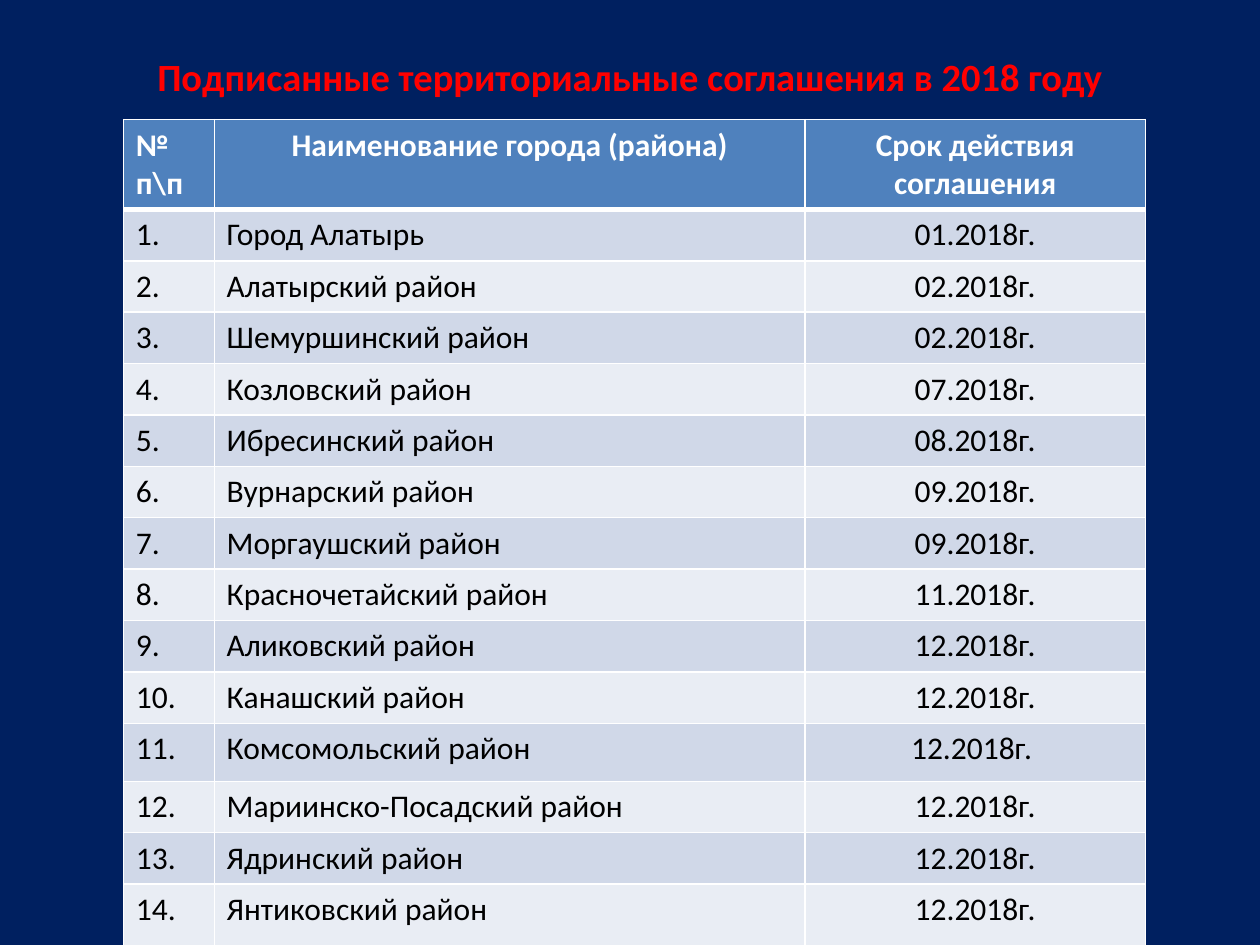
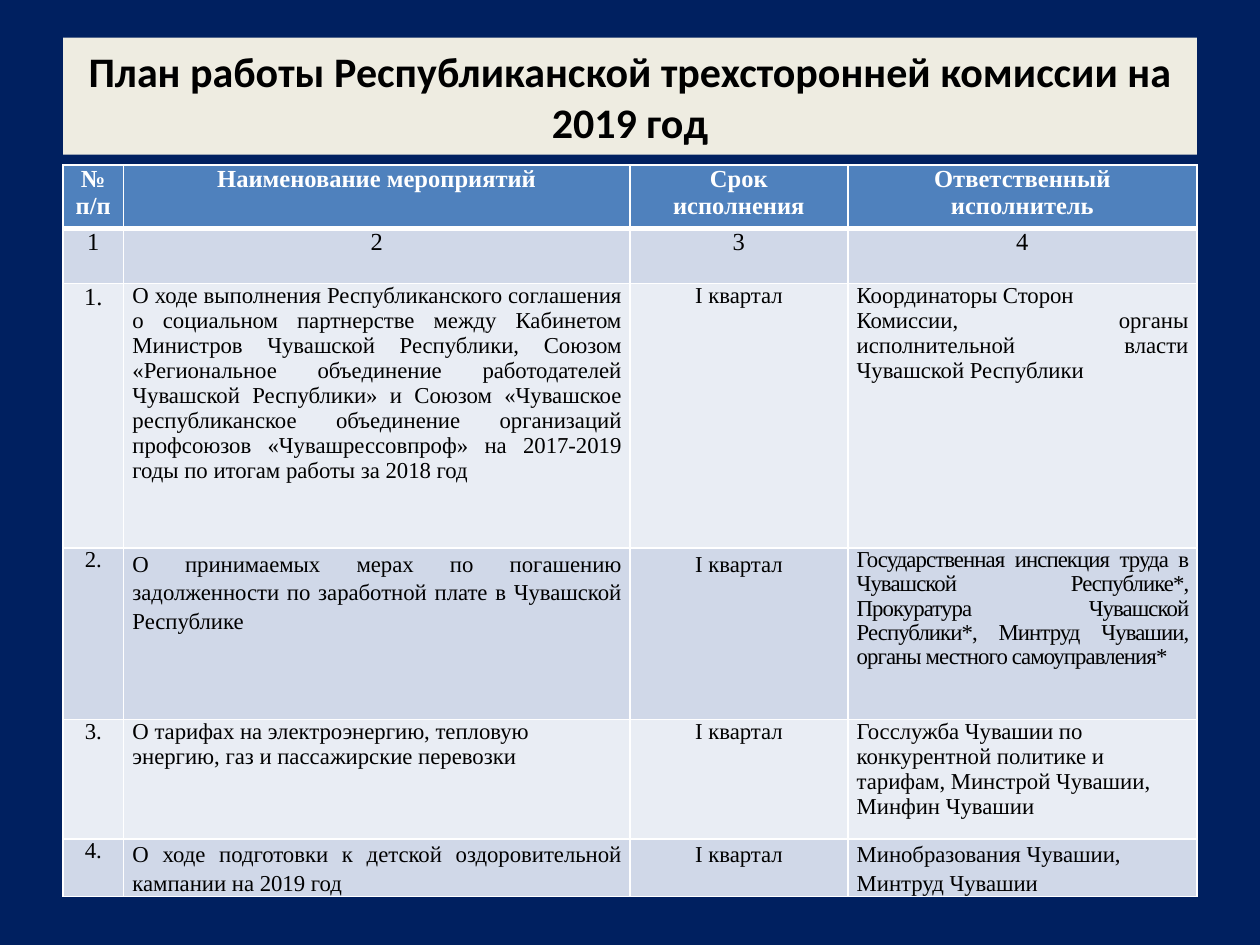
from dataclasses import dataclass, replace

import lxml.etree
import pptx
import pptx.dml.color
import pptx.dml.fill
import pptx.enum.text
import pptx.oxml.ns
import pptx.presentation
import pptx.slide
import pptx.table
import pptx.text.text
import pptx.util

Cm = pptx.util.Cm
LEFT = pptx.enum.text.PP_ALIGN.LEFT
CENTER = pptx.enum.text.PP_ALIGN.CENTER
JUSTIFY = pptx.enum.text.PP_ALIGN.JUSTIFY
MIDDLE = pptx.enum.text.MSO_ANCHOR.MIDDLE

NAVY, RED, CREAM = "002060", "FF0000", "EEECE1"
WHITE, BLACK = "FFFFFF", "000000"
HEADER_BLUE = "4F81BD"
BANDS = ("D0D8E8", "E9EDF4")
SANS, SERIF = "Calibri", "Times New Roman"
TITLE_ONLY_LAYOUT = 5


@dataclass(frozen=True)
class Entry:
    """One table cell; a line break in the text starts a new paragraph."""
    text: str
    align: int = CENTER
    size: float = 13
    line_spacing: float = 1.0
    tracking: float = 0


@dataclass(frozen=True)
class Heading:
    text: str
    height: float
    size: float
    color: str
    fill: str | None = None


@dataclass(frozen=True)
class Grid:
    """Table geometry in centimetres and its rows, header first."""
    left: float
    top: float
    columns: list[float]
    heights: list[float]
    rows: list[list[Entry]]
    font: str
    side_margin: float
    edge_margin: float


def paint(fill: pptx.dml.fill.FillFormat, color: str) -> None:
    fill.solid()
    fill.fore_color.rgb = pptx.dml.color.RGBColor.from_string(color)


def write(frame: pptx.text.text.TextFrame, text: str, *, font: str, size: float,
          color: str, bold: bool = False, align: int = CENTER,
          line_spacing: float = 1.0, tracking: float = 0) -> None:
    for index, line in enumerate(text.split("\n")):
        paragraph = frame.add_paragraph() if index else frame.paragraphs[0]
        paragraph.alignment = align
        paragraph.line_spacing = line_spacing
        run = paragraph.add_run()
        run.text = line
        run.font.name = font
        run.font.size = pptx.util.Pt(size)
        run.font.bold = bold
        paint(run.font.fill, color)
        if tracking:
            run._r.get_or_add_rPr().set("spc", str(round(tracking * 100)))


def draw_borders(cell: pptx.table._Cell, row: int) -> None:
    """White borders, thicker on the line under the header."""
    qn = pptx.oxml.ns.qn
    properties = cell._tc.get_or_add_tcPr()
    widths = {"L": 1, "R": 1, "T": 3 if row == 1 else 1, "B": 3 if row == 0 else 1}
    for side, width in widths.items():
        line = lxml.etree.SubElement(properties, qn(f"a:ln{side}"),
                                     w=str(pptx.util.Pt(width)))
        fill = lxml.etree.SubElement(line, qn("a:solidFill"))
        lxml.etree.SubElement(fill, qn("a:srgbClr"), val=WHITE)


def fill_cell(cell: pptx.table._Cell, entry: Entry, row: int, grid: Grid) -> None:
    is_header = row == 0
    draw_borders(cell, row)
    paint(cell.fill, HEADER_BLUE if is_header else BANDS[(row - 1) % 2])
    cell.margin_left = cell.margin_right = Cm(grid.side_margin)
    cell.margin_top = cell.margin_bottom = Cm(grid.edge_margin)
    write(cell.text_frame, entry.text, font=grid.font, size=entry.size,
          color=WHITE if is_header else BLACK, bold=is_header, align=entry.align,
          line_spacing=entry.line_spacing, tracking=entry.tracking)


def add_grid(slide: pptx.slide.Slide, grid: Grid) -> None:
    table = slide.shapes.add_table(
        len(grid.rows), len(grid.columns), Cm(grid.left), Cm(grid.top),
        Cm(sum(grid.columns)), Cm(sum(grid.heights))).table
    for column, width in zip(table.columns, grid.columns):
        column.width = Cm(width)
    for row, (height, entries) in enumerate(zip(grid.heights, grid.rows)):
        table.rows[row].height = Cm(height)
        for column, entry in enumerate(entries):
            fill_cell(table.cell(row, column), entry, row, grid)


def add_slide(deck: pptx.presentation.Presentation, heading: Heading, grid: Grid) -> None:
    slide = deck.slides.add_slide(deck.slide_layouts[TITLE_ONLY_LAYOUT])
    title = slide.shapes.title
    title.left, title.top = Cm(1.27), Cm(0.76)
    title.width, title.height = Cm(22.86), Cm(heading.height)
    if heading.fill:
        paint(title.fill, heading.fill)
    frame = title.text_frame
    frame.word_wrap = True
    frame.auto_size = pptx.enum.text.MSO_AUTO_SIZE.NONE
    frame.vertical_anchor = MIDDLE
    write(frame, heading.text, font=SANS, size=heading.size,
          color=heading.color, bold=True)
    add_grid(slide, grid)


AGREEMENTS = [
    ("Город Алатырь", "01.2018г."),
    ("Алатырский район", "02.2018г."),
    ("Шемуршинский район", "02.2018г."),
    ("Козловский район", "07.2018г."),
    ("Ибресинский район", "08.2018г."),
    ("Вурнарский район", "09.2018г."),
    ("Моргаушский район", "09.2018г."),
    ("Красночетайский район", "11.2018г."),
    ("Аликовский район", "12.2018г."),
    ("Канашский район", "12.2018г."),
    ("Комсомольский район", "12.2018г. "),
    ("Мариинско-Посадский район", "12.2018г."),
    ("Ядринский район", "12.2018г."),
    ("Янтиковский район", "12.2018г."),
]


def agreement_row(number: str, district: str, term: str,
                  district_align: int = LEFT) -> list[Entry]:
    return [Entry(number, LEFT, 18), Entry(district, district_align, 18),
            Entry(term, CENTER, 18)]


def agreements_grid() -> Grid:
    rows = [agreement_row("№\nп\\п", "Наименование города (района)",
                          "Срок действия соглашения", CENTER)]
    rows += [agreement_row(f"{number}.", district, term)
             for number, (district, term) in enumerate(AGREEMENTS, 1)]
    heights = [1.73] + [0.99] * 10 + [1.17, 0.99, 0.99, 1.24]
    return Grid(2.49, 2.41, [1.83, 11.91, 6.86], heights, rows, SANS, 0.25, 0.13)


def plan_row(number: Entry, activity: Entry, executor: Entry) -> list[Entry]:
    """A row due in the first quarter, spaced like its activity."""
    term = Entry("I квартал", line_spacing=activity.line_spacing)
    return [number, activity, term, executor]


def plan_grid() -> Grid:
    header = ["№\nп/п", "Наименование мероприятий", "Срок\nисполнения",
              "Ответственный\nисполнитель"]
    justified = Entry("", JUSTIFY)
    loose = replace(justified, line_spacing=1.15)
    rows = [
        [Entry(text, size=14) for text in header],
        [Entry(str(number), size=14) for number in range(1, 5)],
        plan_row(
            Entry("1.", size=14),
            replace(justified, text=(
                "О ходе выполнения Республиканского соглашения о социальном "
                "партнерстве между Кабинетом Министров Чувашской Республики, "
                "Союзом «Региональное объединение работодателей Чувашской "
                "Республики» и Союзом «Чувашское республиканское объединение "
                "организаций профсоюзов «Чувашрессовпроф» на 2017-2019 годы "
                "по итогам работы за 2018 год")),
            replace(justified, text=(
                "Координаторы Сторон \nКомиссии, органы исполнительной власти "
                "Чувашской Республики"))),
        plan_row(
            Entry("2.", line_spacing=0.97),
            replace(loose, text=(
                "О принимаемых мерах по погашению задолженности по заработной "
                "плате в Чувашской Республике")),
            Entry("Государственная инспекция труда в Чувашской Республике*, "
                  "Прокуратура Чувашской Республики*, Минтруд Чувашии, "
                  "органы местного самоуправления* ",
                  JUSTIFY, line_spacing=0.97, tracking=-0.5)),
        plan_row(
            Entry("3."),
            Entry("О тарифах на электроэнергию, тепловую энергию, газ и "
                  "пассажирские перевозки", LEFT),
            Entry("Госслужба Чувашии по конкурентной политике и тарифам, "
                  "Минстрой Чувашии, Минфин Чувашии", LEFT)),
        plan_row(
            Entry("4.", line_spacing=0.97),
            replace(loose, text=(
                "О ходе подготовки к детской оздоровительной кампании на 2019 год")),
            replace(loose, text="Минобразования Чувашии, \nМинтруд Чувашии")),
    ]
    return Grid(1.27, 3.33, [1.22, 10.21, 4.39, 7.04],
                [1.27, 1.12, 5.33, 3.45, 2.41, 1.12], rows, SERIF, 0.18, 0)


def main() -> None:
    deck = pptx.Presentation()
    deck.slide_width, deck.slide_height = Cm(25.4), Cm(19.05)
    paint(deck.slide_master.background.fill, NAVY)
    add_slide(deck, Heading("Подписанные территориальные соглашения в 2018 году",
                            1.55, 22, RED), agreements_grid())
    add_slide(deck, Heading("План работы Республиканской трехсторонней комиссии "
                            "на 2019 год", 2.36, 24, BLACK, CREAM), plan_grid())
    deck.save("out.pptx")


if __name__ == "__main__":
    main()
